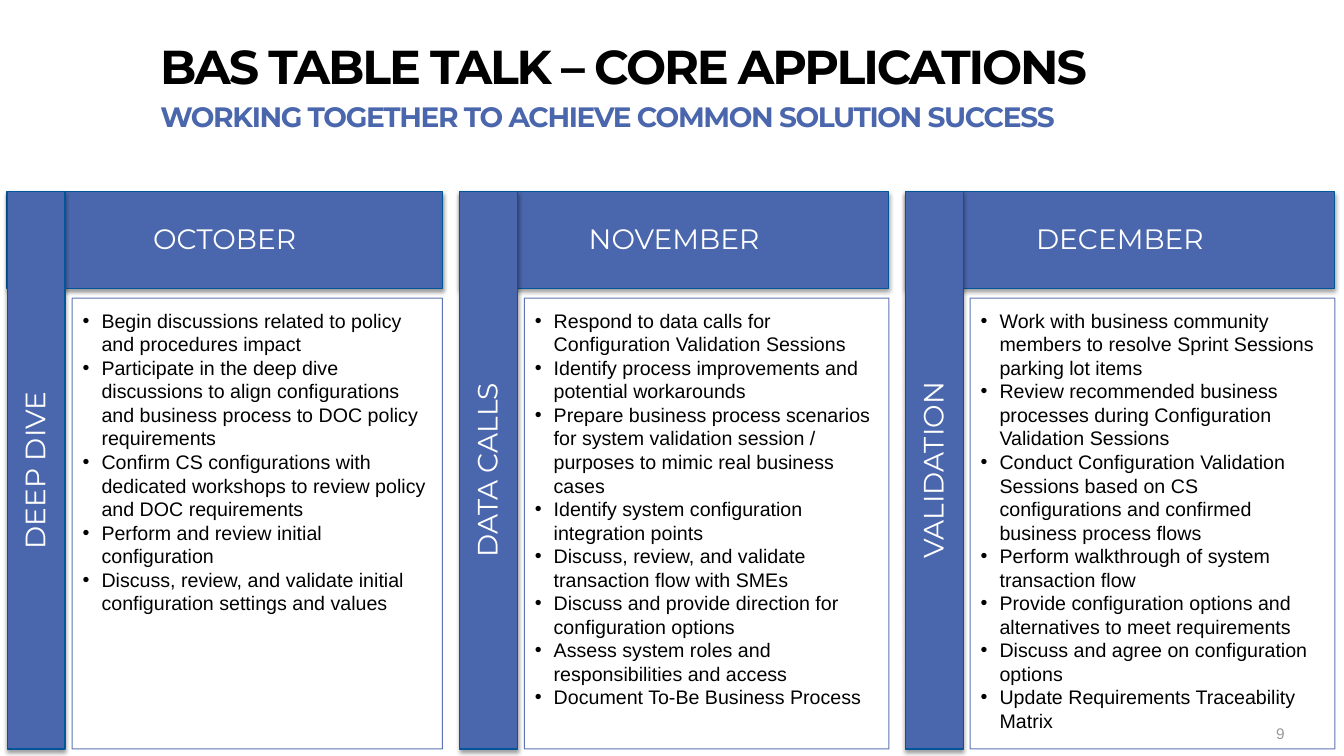
from pptx import Presentation
from pptx.dml.color import RGBColor
from pptx.enum.shapes import MSO_SHAPE as Shape
from pptx.enum.text import MSO_ANCHOR as Anchor, PP_ALIGN as Align
from pptx.oxml import parse_xml
from pptx.oxml.ns import nsdecls
from pptx.util import Pt

BLUE = RGBColor(0x4A, 0x66, 0xAC)
EDGE = RGBColor(0x00, 0x56, 0x99)
BLACK = RGBColor(0, 0, 0)
WHITE = RGBColor(255, 255, 255)
GREY = RGBColor(0x99, 0x99, 0x99)


class MonthBoard:
    heading_font = "Montserrat"
    body_font = "Arial"
    header_top, header_height = 137, 69
    panel_top, panel_height, panel_indent = 213, 322, 46.5
    banner_length, banner_width = 398, 41

    def __init__(self, page):
        self.shapes = page.shapes

    def add_span(self, para, text, font, size, color, bold=False, tracking=0):
        span = para.add_run()
        span.text = text
        span.font.name, span.font.size = font, Pt(size)
        span.font.bold = bold
        span.font.color.rgb = color
        if tracking:
            span._r.get_or_add_rPr().set("spc", str(tracking))

    def frame(self, box, margins, anchor=Anchor.TOP):
        frame = box.text_frame
        frame.word_wrap = True
        frame.vertical_anchor = anchor
        (frame.margin_left, frame.margin_top,
         frame.margin_right, frame.margin_bottom) = map(Pt, margins)
        return frame

    def label(self, left, top, width, height, text, font, size, color,
              margins=(0, 0, 0, 0), spacing=1.0, bold=False, tracking=0):
        box = self.shapes.add_textbox(Pt(left), Pt(top), Pt(width), Pt(height))
        para = self.frame(box, margins).paragraphs[0]
        para.line_spacing = spacing
        self.add_span(para, text, font, size, color, bold, tracking)

    def rectangle(self, left, top, width, height, line):
        box = self.shapes.add_shape(
            Shape.RECTANGLE, Pt(left), Pt(top), Pt(width), Pt(height))
        box.shadow.inherit = False
        box.line.color.rgb = line
        box.line.width = Pt(0.75)
        return box

    def fade(self, fill):
        color = fill._xPr.find(".//{*}srgbClr")
        color.append(parse_xml(f'<a:alpha {nsdecls("a")} val="90000"/>'))

    def bar(self, left, top, width, height, text, rotation=0):
        box = self.rectangle(left, top, width, height, EDGE)
        box.rotation = rotation
        box.fill.solid()
        box.fill.fore_color.rgb = BLUE
        box._element.spPr.find("{*}effectLst").append(parse_xml(
            f'<a:outerShdw {nsdecls("a")} blurRad="{Pt(3.1)}" dist="{Pt(1.6)}" '
            'dir="5400000" rotWithShape="0"><a:srgbClr val="000000">'
            '<a:alpha val="38000"/></a:srgbClr></a:outerShdw>'))
        para = self.frame(box, (11.5, 6.5, 11.5, 6.5), Anchor.MIDDLE).paragraphs[0]
        para.alignment = Align.CENTER
        para.line_spacing = 0.9
        self.add_span(para, text, self.heading_font, 20, WHITE)

    def panel(self, left, width, items, filled):
        box = self.rectangle(left, self.panel_top, width, self.panel_height, BLUE)
        self.fade(box.line.fill)
        if filled:
            box.fill.solid()
            box.fill.fore_color.rgb = WHITE
            self.fade(box.fill)
        else:
            box.fill.background()
        frame = self.frame(box, (7.5, 7.5, 10, 11.5))
        for index, item in enumerate(items):
            para = frame.paragraphs[0] if index == 0 else frame.add_paragraph()
            para.alignment = Align.LEFT
            properties = para._p.get_or_add_pPr()
            properties.set("marL", str(Pt(13.5)))
            properties.set("indent", str(-Pt(13.5)))
            properties.append(parse_xml(f'<a:buFont {nsdecls("a")} typeface="Arial"/>'))
            properties.append(parse_xml(f'<a:buChar {nsdecls("a")} char="•"/>'))
            self.add_span(para, item, self.body_font, 14, BLACK)

    def month(self, left, width, name, items, filled):
        self.bar(left, self.header_top, width, self.header_height, name)
        self.panel(left + self.panel_indent, width - self.panel_indent, items, filled)

    def banner(self, left, text):
        # Turned about its centre, so the long side runs upwards
        center_x = left + self.banner_width / 2 + 0.5
        center_y = self.header_top + self.banner_length / 2
        self.bar(center_x - self.banner_length / 2, center_y - self.banner_width / 2,
                 self.banner_length, self.banner_width, text, 270)


MONTHS = [
    (5, 311, "OCTOBER", "DEEP DIVE", True, [
        "Begin discussions related to policy and procedures impact",
        "Participate in the deep dive discussions to align configurations and "
        "business process to DOC policy requirements",
        "Confirm CS configurations with dedicated workshops to review policy "
        "and DOC requirements",
        "Perform and review initial configuration",
        "Discuss, review, and validate initial configuration settings and values",
    ]),
    (328, 307, "NOVEMBER", "DATA CALLS", True, [
        "Respond to data calls for Configuration Validation Sessions",
        "Identify process improvements and potential workarounds",
        "Prepare business process scenarios for system validation session / "
        "purposes to mimic real business cases",
        "Identify system configuration integration points",
        "Discuss, review, and validate transaction flow with SMEs",
        "Discuss and provide direction for configuration options",
        "Assess system roles and responsibilities and access",
        "Document To-Be Business Process",
    ]),
    (646.5, 307, "DECEMBER", "VALIDATION", False, [
        "Work with business community members to resolve Sprint Sessions "
        "parking lot items",
        "Review recommended business processes during Configuration "
        "Validation Sessions",
        "Conduct Configuration Validation Sessions based on CS configurations "
        "and confirmed business process flows",
        "Perform walkthrough of system transaction flow",
        "Provide configuration options and alternatives to meet requirements",
        "Discuss and agree on configuration options",
        "Update Requirements Traceability Matrix",
    ]),
]


def main():
    deck = Presentation()
    deck.slide_width, deck.slide_height = Pt(960), Pt(540)
    board = MonthBoard(deck.slides.add_slide(deck.slide_layouts[6]))

    # Page number and headings
    board.label(904.5, 513.5, 30, 16.5, "9", board.body_font, 11, GREY,
                margins=(7.2, 3.6, 7.2, 3.6))
    board.label(114.5, 29.5, 720, 39, "BAS TABLE TALK – CORE APPLICATIONS",
                board.heading_font, 34, BLACK, margins=(0, 5, 0, 0),
                spacing=0.8, bold=True, tracking=-150)
    board.label(114.5, 68.5, 735, 40,
                "WORKING TOGETHER TO ACHIEVE COMMON SOLUTION SUCCESS",
                board.heading_font, 20, BLUE, spacing=1.1, bold=True, tracking=-100)

    # Month columns, then the upright banners over their left edges
    for left, width, name, phase, filled, items in MONTHS:
        board.month(left, width, name, items, filled)
    for left, width, name, phase, filled, items in MONTHS:
        board.banner(left, phase)

    deck.save("out.pptx")


if __name__ == "__main__":
    main()
